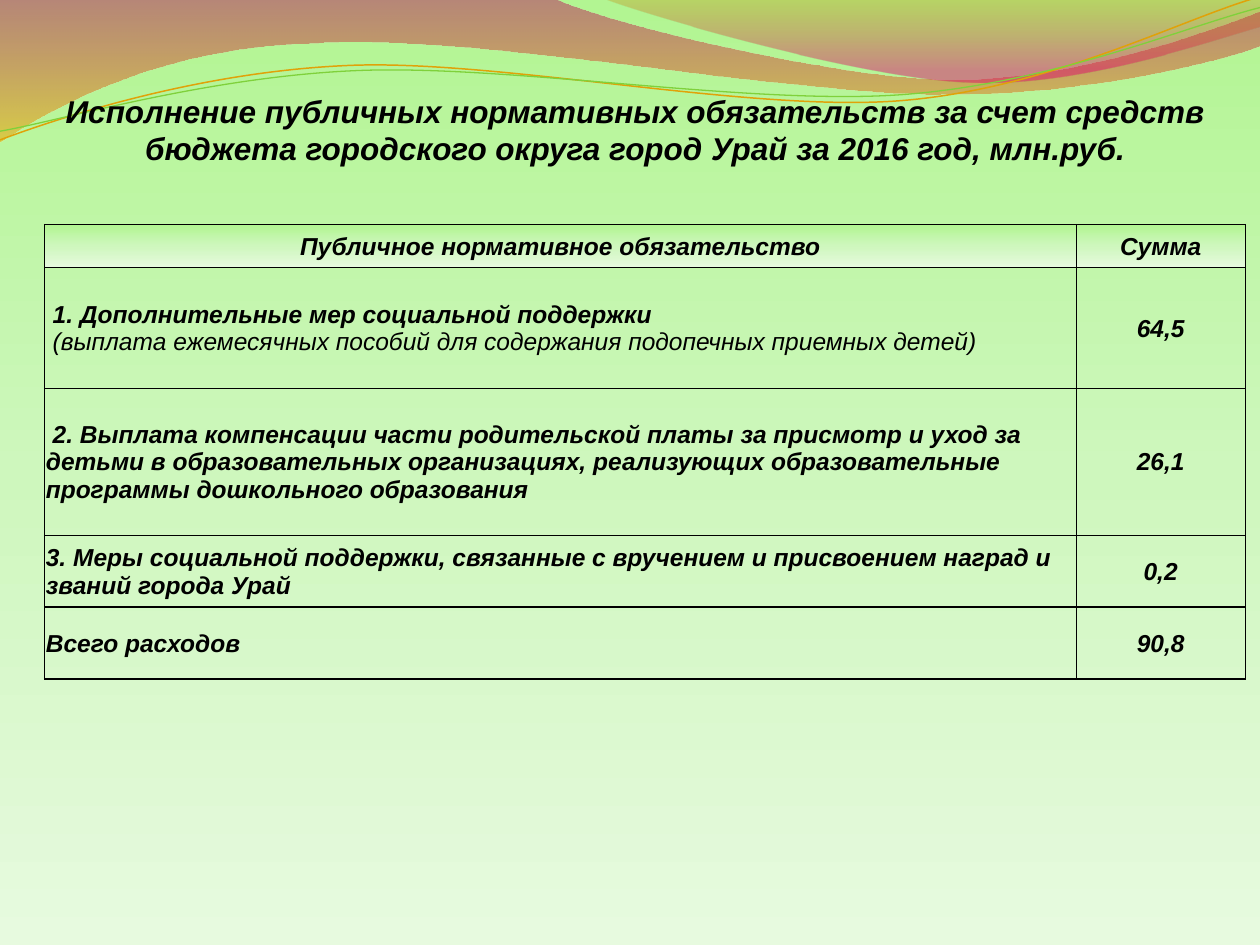
from lxml.etree import SubElement
from pptx import Presentation
from pptx.dml.color import RGBColor
from pptx.enum.text import MSO_ANCHOR as Anchor, PP_ALIGN as Align
from pptx.oxml.ns import qn
from pptx.util import Pt

BLACK = RGBColor(0x00, 0x00, 0x00)
LIME = RGBColor(0xB2, 0xF5, 0x92)
PALE_LIME = RGBColor(0xCE, 0xF7, 0xBD)
MINT = RGBColor(0xE7, 0xFA, 0xDF)
CRIMSON = RGBColor(0xBD, 0x00, 0x59)
AMBER = RGBColor(0xF0, 0xAB, 0x00)
OCHRE = RGBColor(0xC3, 0x8B, 0x00)
PINK = RGBColor(0xE1, 0x00, 0x6B)
GOLD = RGBColor(0xE0, 0xA2, 0x09)
GREEN = RGBColor(0x7F, 0xD1, 0x3B)

FONT = "Arial"
GREEN_FADE = [(0, LIME, 100), (50, PALE_LIME, 100), (100, MINT, 100)]
STRAND_TILT = -2.7

BANDS = [
    ((0, 0), [
        [(316.8, -0.7)],
        [(342.7, 12.2), (478, 45.4), (545.8, 45.4)],
        [(614, 45.4), (689.8, 18.7), (720, 6.5)],
        [(720.7, 25.9)],
        [(707.8, 31.7), (626.4, 54.7), (537.1, 54)],
        [(447.8, 54), (275, 20.2), (185, 24.5)],
        [(92.9, 25.9), (33.1, 59.8), (-0.7, 81.4)],
        [(0, 0)],
    ], [(0, CRIMSON, 45), (100, AMBER, 55)]),
    ((344.9, -0.7), [
        [(366.5, 7.9), (491, 44.6), (553.7, 46.8)],
        [(616.3, 49.7), (691.9, 23), (720, 15.1)],
        [(720, 0)],
        [(344.9, -0.7)],
    ], [(0, OCHRE, 30), (80, PINK, 45)]),
]
STRANDS = [
    ((-1.4, 63), [
        [(33.8, 51.7), (114.1, 29.4), (199.8, 29.9)],
        [(284.8, 30.3), (425.8, 67.3), (512.4, 64.9)],
        [(599, 62.4), (676.5, 25.7), (720.2, 15.5)],
    ], GOLD, 0.85),
    ((-1.1, 58), [
        [(32.9, 53.8), (118.3, 32.5), (204.1, 33)],
        [(290.6, 33.4), (428.9, 63.8), (515.5, 61.4)],
        [(601.4, 58.9), (678.5, 30.1), (721.4, 21.3)],
    ], GREEN, 0.75),
]

TITLE = ("Исполнение публичных нормативных обязательств за счет средств "
         "бюджета городского округа город Урай за 2016 год, млн.руб.")
ROWS = [
    (24.5, ["Публичное нормативное обязательство"], "Сумма"),
    (69, [" 1. Дополнительные мер социальной поддержки",
          " (выплата ежемесячных пособий для содержания подопечных приемных детей)"],
     "64,5"),
    (84, [" 2. Выплата компенсации части родительской платы за присмотр и уход за "
          "детьми в образовательных организациях, реализующих образовательные "
          "программы дошкольного образования"], "26,1"),
    (41, ["3. Меры социальной поддержки, связанные с вручением и присвоением "
          "наград и званий города Урай"], "0,2"),
    (41, ["Всего расходов"], "90,8"),
]


def fill_gradient(fill, parent, stops):
    fill.solid()
    solid = parent.find(qn("a:solidFill"))
    gradient = solid.makeelement(qn("a:gradFill"), {"rotWithShape": "1"})
    stop_list = SubElement(gradient, qn("a:gsLst"))
    for position, color, opacity in stops:
        stop = SubElement(stop_list, qn("a:gs"), pos=str(position * 1000))
        tint = SubElement(stop, qn("a:srgbClr"), val=str(color))
        if opacity < 100:
            SubElement(tint, qn("a:alpha"), val=str(opacity * 1000))
    SubElement(gradient, qn("a:lin"), ang="5400000", scaled="0")
    parent.replace(solid, gradient)


def bend_segments(shape, segments):
    lines = iter(list(shape.element.iter(qn("a:lnTo"))))
    for segment in segments:
        group = [next(lines) for _ in segment]
        if len(group) == 3:
            curve = group[0].makeelement(qn("a:cubicBezTo"), {})
            group[0].addprevious(curve)
            for line in group:
                curve.append(line[0])
                line.getparent().remove(line)


def add_outline(page, box, start, segments, close):
    left, top = box[:2]
    points = [(Pt(left + x), Pt(top + y)) for x, y in [start, *sum(segments, [])]]
    builder = page.shapes.build_freeform(*points[0])
    builder.add_line_segments(points[1:], close=close)
    shape = builder.convert_to_shape()
    bend_segments(shape, segments)
    shape.shadow.inherit = False
    return shape


def add_waves(page, box):
    for start, segments, stops in BANDS:
        band = add_outline(page, box, start, segments, True)
        fill_gradient(band.fill, band.element.spPr, stops)
        band.line.fill.background()
    for start, segments, color, width in STRANDS:
        strand = add_outline(page, box, start, segments, False)
        strand.rotation = STRAND_TILT
        strand.fill.background()
        strand.line.color.rgb = color
        strand.line.width = Pt(width)


def style_para(para, size, align, bold=True):
    para.alignment = align
    for span in para.runs:
        font = span.font
        font.name, font.size = FONT, Pt(size)
        font.bold, font.italic = bold, True
        font.color.rgb = BLACK


def add_title(page, box):
    frame = page.shapes.add_textbox(*map(Pt, box)).text_frame
    frame.word_wrap = True
    frame.text = TITLE
    style_para(frame.paragraphs[0], 18, Align.CENTER)


def set_borders(cell, **widths):
    properties = cell._tc.get_or_add_tcPr()
    for side, width in widths.items():
        line = SubElement(properties, qn(f"a:ln{side}"), w=str(Pt(width)))
        solid = SubElement(line, qn("a:solidFill"))
        SubElement(solid, qn("a:srgbClr"), val=str(BLACK))


def fill_cell(cell, lines, row, column):
    cell.vertical_anchor = Anchor.MIDDLE
    cell.margin_left = cell.margin_right = cell.margin_top = Pt(0.7)
    cell.margin_bottom = Pt(0)
    cell.text_frame.text = "\n".join(lines)
    align = Align.CENTER if row == 0 or column == 1 else Align.LEFT
    for index, para in enumerate(cell.text_frame.paragraphs):
        style_para(para, 14, align, bold=index == 0)
    set_borders(cell, L=0.5 if column else 1, R=0.5,
                T=0.5 if row == 1 else 1, B=0.5 if row == 0 else 1)
    if row == 0:
        fill_gradient(cell.fill, cell._tc.get_or_add_tcPr(), GREEN_FADE)
    else:
        cell.fill.background()


def add_obligations_table(page, box):
    table = page.shapes.add_table(len(ROWS), 2, *map(Pt, box)).table
    table.first_row = table.horz_banding = False
    amount_width = 96.5
    table.columns[0].width = Pt(box[2] - amount_width)
    table.columns[1].width = Pt(amount_width)
    for row, (height, obligation, amount) in enumerate(ROWS):
        table.rows[row].height = Pt(height)
        fill_cell(table.cell(row, 0), obligation, row, 0)
        fill_cell(table.cell(row, 1), [amount], row, 1)


def main():
    deck = Presentation()
    deck.slide_width, deck.slide_height = Pt(720), Pt(540)
    page = deck.slides.add_slide(deck.slide_layouts[6])
    background = page.background.fill
    background.solid()
    fill_gradient(background, page.element.find(".//" + qn("p:bgPr")), GREEN_FADE)
    add_waves(page, (0, 0, 720, 82))
    add_title(page, (20, 48.8, 686, 155))
    add_obligations_table(page, (25.5, 128.4, 686, 259.5))
    deck.save("out.pptx")


if __name__ == "__main__":
    main()
